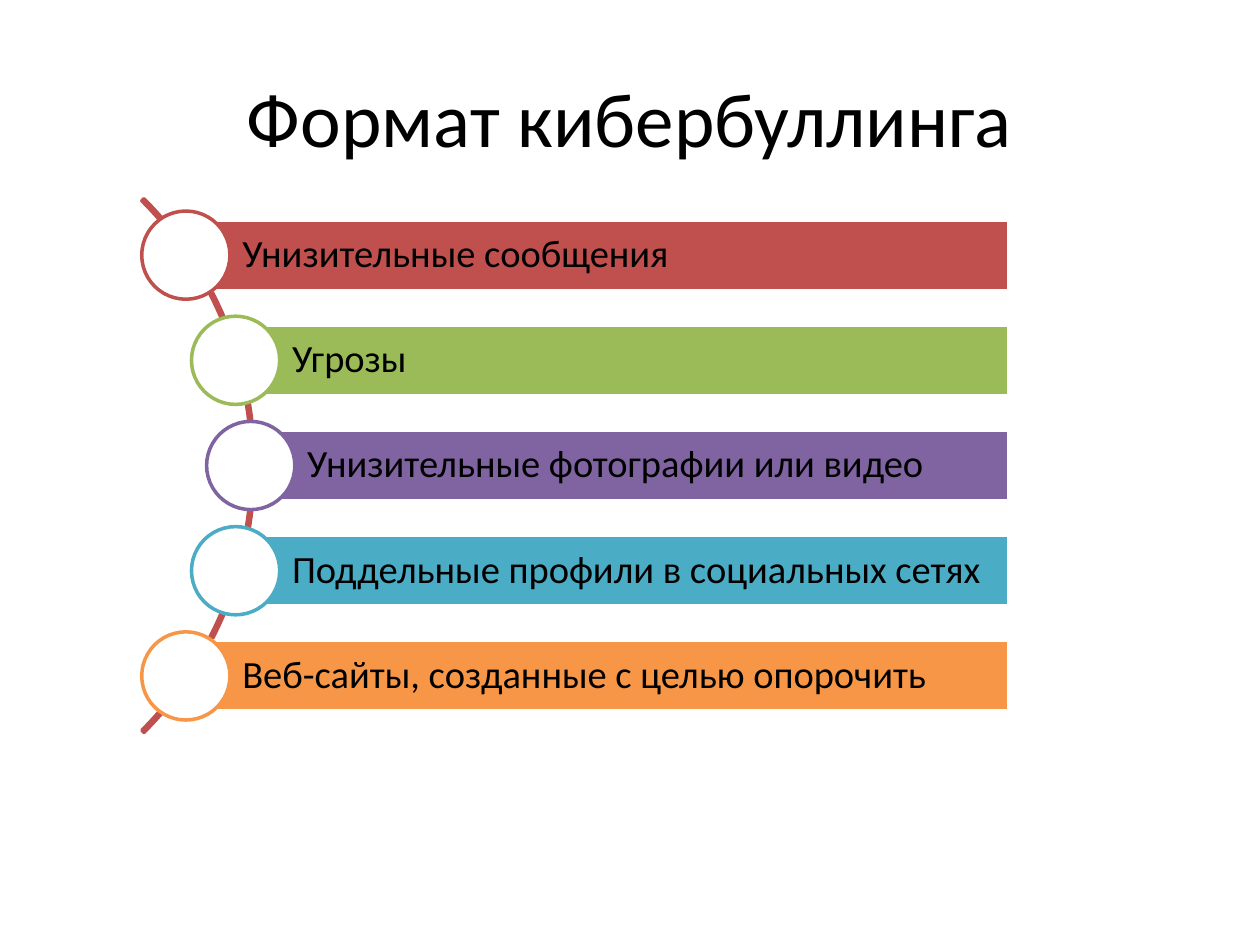
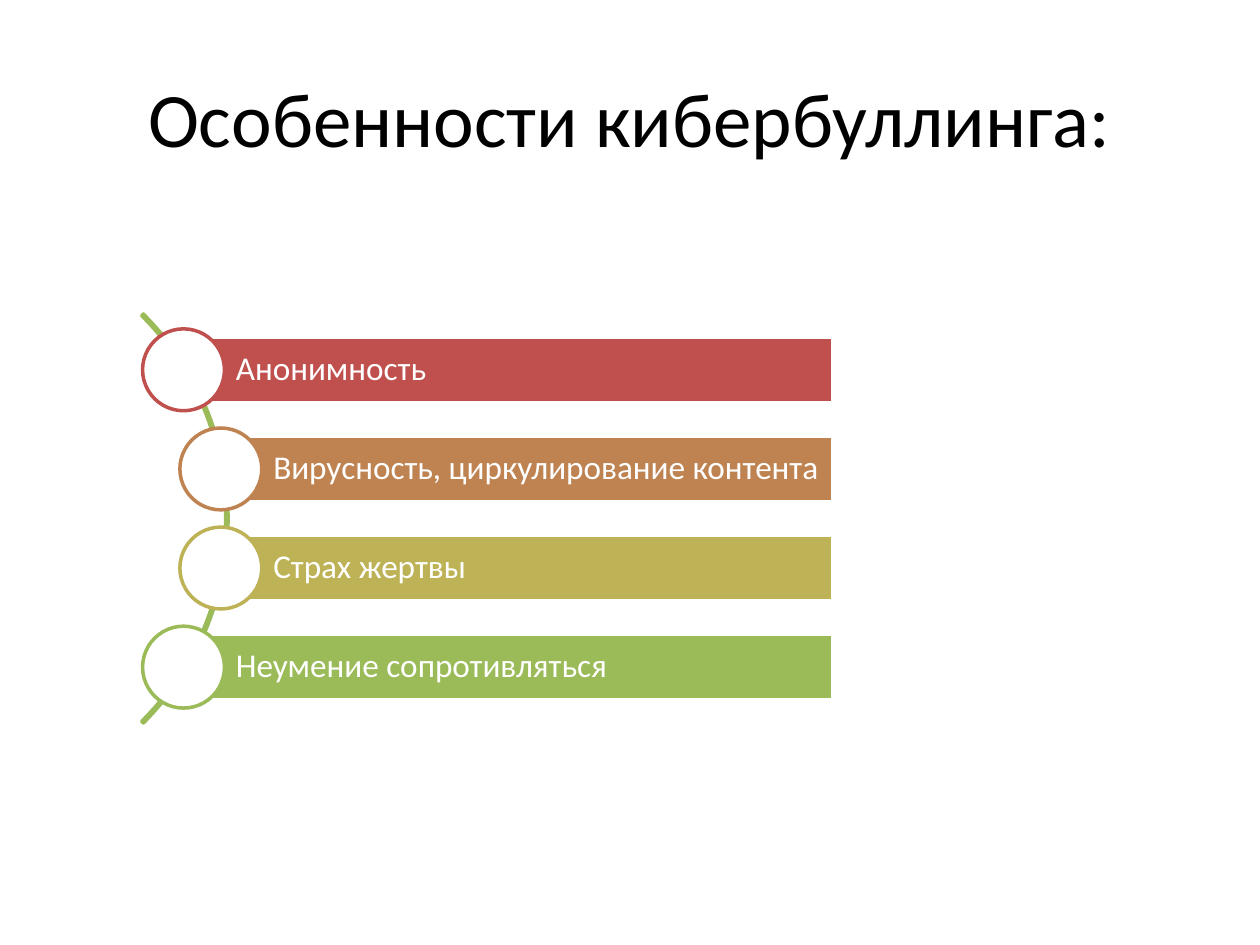
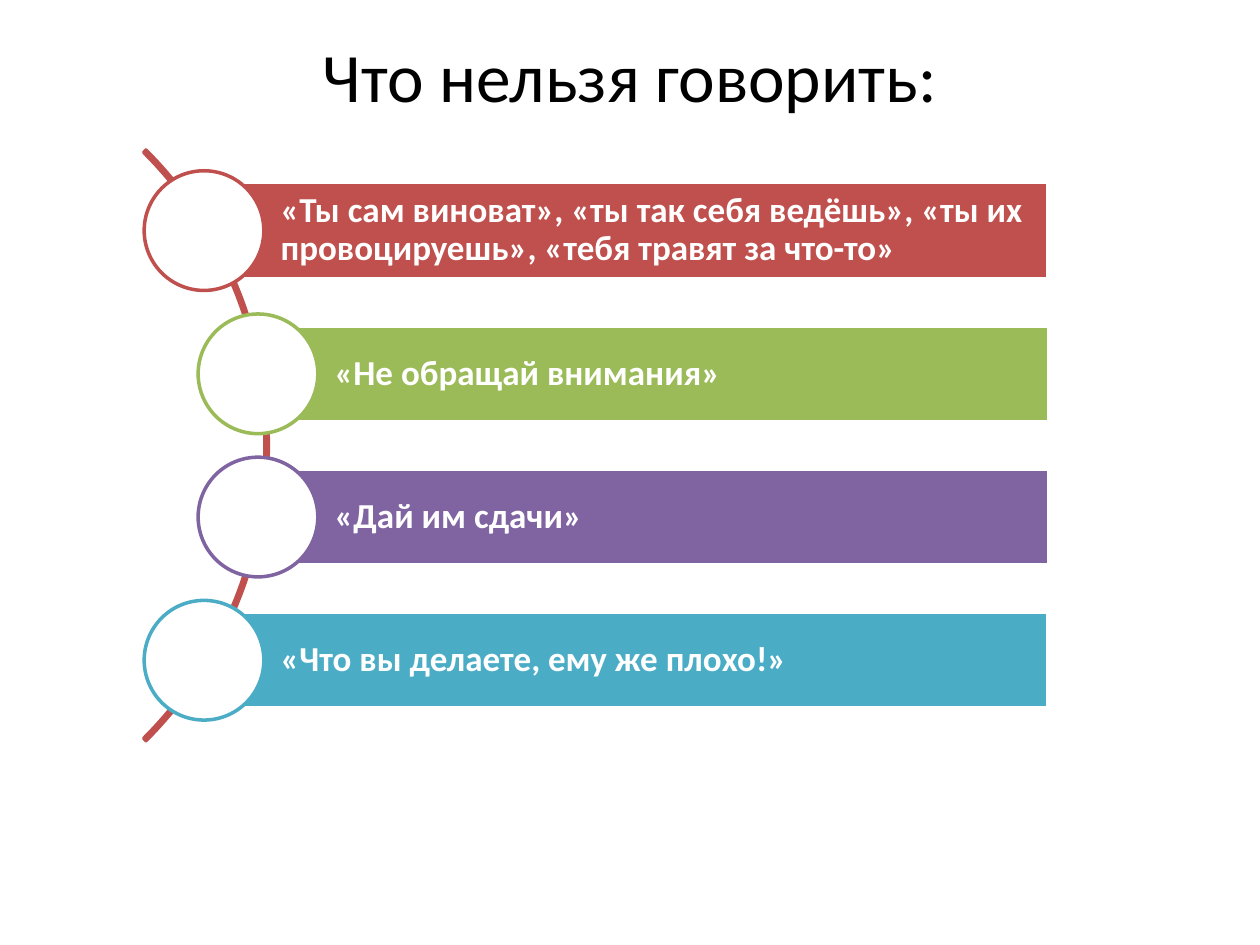
from math import sqrt

from pptx import Presentation
from pptx.dml.color import RGBColor
from pptx.enum.shapes import MSO_SHAPE as Shape
from pptx.enum.text import MSO_ANCHOR as Anchor, PP_ALIGN as Align
from pptx.util import Inches, Pt

# Shared style
FONT = "Calibri"
BLACK, WHITE = "000000", "FFFFFF"
RED, GREEN, PURPLE = "C0504D", "9BBB59", "8064A2"
TEAL, ORANGE = "4BACC6", "F79646"
BROWN, OLIVE = "BE8351", "BDB255"


def color(code):
    return RGBColor.from_string(code)


def add_run(par, text, size, ink, bold=False):
    run = par.add_run()
    run.text = text
    font = run.font
    font.name, font.size, font.bold = FONT, Pt(size), bold
    font.color.rgb = color(ink)


def add_title(slide, text, size=44, bottom=0.05):
    box = slide.shapes.add_textbox(Inches(0.5), Inches(0.3),
                                   Inches(9), Inches(1.25))
    frame = box.text_frame
    frame.word_wrap = True
    frame.vertical_anchor = Anchor.MIDDLE
    frame.margin_bottom = Inches(bottom)
    par = frame.paragraphs[0]
    par.alignment = Align.CENTER
    add_run(par, text, size, BLACK)


def add_form(slide, kind, left, top, width, height, fill, line):
    form = slide.shapes.add_shape(kind, Inches(left), Inches(top),
                                  Inches(width), Inches(height))
    form.shadow.inherit = False
    if fill:
        form.fill.solid()
        form.fill.fore_color.rgb = color(fill)
    else:
        form.fill.background()
    form.line.color.rgb = color(line)
    form.line.width = Pt(2)
    return form


def add_arc(slide, left, top, size, line):
    arc = add_form(slide, Shape.BLOCK_ARC, left, top, size, size, None, line)
    # Start and end angle (315 and 45 degrees), then thickness
    for i, value in enumerate((189, 27, 0.004)):
        arc.adjustments[i] = value


def add_bar(slide, left, mid, right, height, fill, text, style):
    bar = add_form(slide, Shape.RECTANGLE, left, mid - height / 2,
                   right - left, height, fill, WHITE)
    frame = bar.text_frame
    frame.word_wrap = True
    frame.vertical_anchor = Anchor.MIDDLE
    frame.margin_left = Inches(0.8 * height)
    frame.margin_right = frame.margin_top = frame.margin_bottom = Inches(0.06)
    par = frame.paragraphs[0]
    par.alignment = Align.LEFT
    par.line_spacing = 0.9
    add_run(par, text, *style)


def add_list(slide, arc, line, right, height, span, style, rows):
    """Place bars at equal steps, each starting on the arc with a dot."""
    left, top, size = arc
    add_arc(slide, left, top, size, line)
    radius = size / 2
    step = span / (len(rows) - 1)
    dot = 1.25 * height
    for i, (fill, text) in enumerate(rows):
        rise = i * step - span / 2
        mid = top + radius + rise
        start = left + radius + sqrt((0.99 * radius) ** 2 - rise ** 2)
        add_bar(slide, start, mid, right, height, fill, text, style)
        add_form(slide, Shape.OVAL, start - dot / 2, mid - dot / 2,
                 dot, dot, WHITE, fill)


def main():
    deck = Presentation()
    deck.slide_width, deck.slide_height = Inches(10), Inches(7.5)
    blank = deck.slide_layouts[6]

    # Formats
    slide = deck.slides.add_slide(blank)
    add_title(slide, "Формат кибербуллинга")
    add_list(slide, (-3.97, 0.7, 5.99), RED, 8.01, 0.56, 3.34, (22, BLACK), [
        (RED, "Унизительные сообщения"),
        (GREEN, "Угрозы"),
        (PURPLE, "Унизительные фотографии или видео"),
        (TEAL, "Поддельные профили в социальных сетях"),
        (ORANGE, "Веб-сайты, созданные с целью опорочить"),
    ])

    # Features
    slide = deck.slides.add_slide(blank)
    add_title(slide, "Особенности кибербуллинга:")
    add_list(slide, (-2.78, 1.82, 4.59), GREEN, 6.61, 0.52, 2.36, (19, WHITE), [
        (RED, "Анонимность"),
        (BROWN, "Вирусность, циркулирование контента"),
        (OLIVE, "Страх жертвы"),
        (GREEN, "Неумение сопротивляться"),
    ])

    # What not to say
    slide = deck.slides.add_slide(blank)
    add_title(slide, "Что нельзя говорить:", 39.6, 0.72)
    add_list(slide, (-4.5, 0.22, 6.63), RED, 8.32, 0.76, 3.41,
             (20, WHITE, True), [
        (RED, "«Ты сам виноват», «ты так себя ведёшь», "
              "«ты их провоцируешь», «тебя травят за что-то»"),
        (GREEN, "«Не обращай внимания»"),
        (PURPLE, "«Дай им сдачи»"),
        (TEAL, "«Что вы делаете, ему же плохо!»"),
    ])

    deck.save("out.pptx")


if __name__ == "__main__":
    main()
